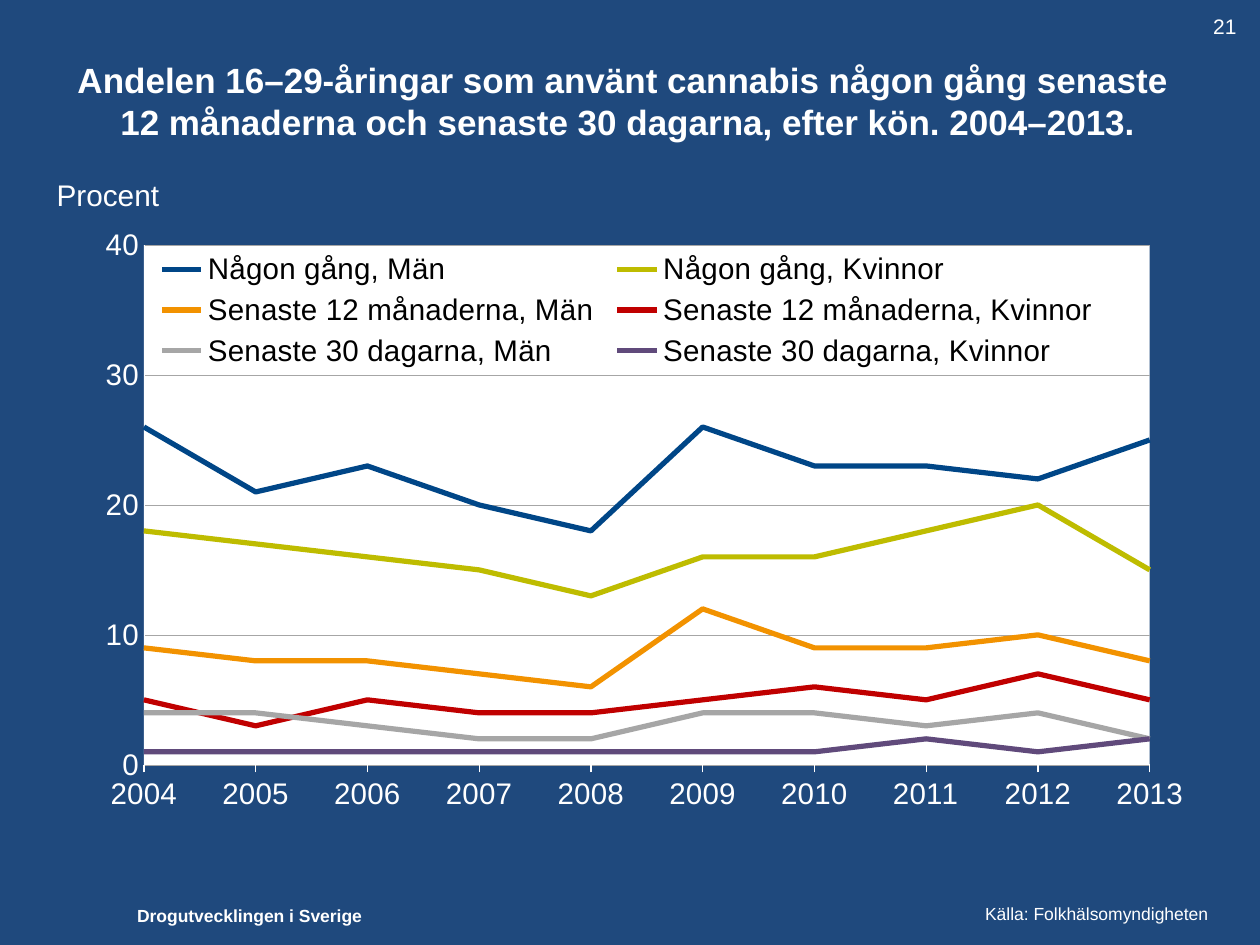
import pptx
import pptx.chart.data
import pptx.dml.color
import pptx.enum.chart
import pptx.enum.text
import pptx.oxml
import pptx.oxml.ns
import pptx.util

Inches, Pt = pptx.util.Inches, pptx.util.Pt
ALIGN, ANCHOR = pptx.enum.text.PP_ALIGN, pptx.enum.text.MSO_ANCHOR
TICK = pptx.enum.chart.XL_TICK_MARK

THEME = {
    "font": "Arial", "bg": "1F497D", "text": "FFFFFF", "plot": "FFFFFF",
    "legend": "000000", "grid": "A6A6A6",
    "title_size": 20, "chart_size": 17, "page_size": 12, "footer_size": 10,
}
TITLE = ("Andelen 16–29-åringar som använt cannabis någon gång senaste \v"
         "12 månaderna och senaste 30 dagarna, efter kön. 2004–2013.")
TITLE_BOX = (0.21, 0.21, 9.55, 1.18)
LABELS = [
    ("Drogutvecklingen i Sverige", (0.99, 7.13, 2.1, 0.27), {"size": "footer_size", "bold": True}),
    ("21", (9.53, 0.06, 0.45, 0.3), {"size": "page_size"}),
    ("Procent", (0.35, 1.35, 1.02, 0.39), {"size": "chart_size", "anchor": ANCHOR.MIDDLE}),
    ("Källa: Folkhälsomyndigheten", (7.72, 7.12, 2.19, 0.27), {"size": "footer_size"}),
]
YEARS = [str(year) for year in range(2004, 2014)]
SERIES = [
    ("Någon gång, Män", "004687", (26, 21, 23, 20, 18, 26, 23, 23, 22, 25)),
    ("Någon gång, Kvinnor", "BEBC00", (18, 17, 16, 15, 13, 16, 16, 18, 20, 15)),
    ("Senaste 12 månaderna, Män", "F29200", (9, 8, 8, 7, 6, 12, 9, 9, 10, 8)),
    ("Senaste 12 månaderna, Kvinnor", "C00000", (5, 3, 5, 4, 4, 5, 6, 5, 7, 5)),
    ("Senaste 30 dagarna, Män", "A6A6A6", (4, 4, 3, 2, 2, 4, 4, 3, 4, 2)),
    ("Senaste 30 dagarna, Kvinnor", "604A7B", (1, 1, 1, 1, 1, 1, 1, 2, 1, 2)),
]
CHART_BOX = (0.47, 1.78, 8.92, 4.86)
PLOT_LAYOUT = (0.076, 0.034, 0.903, 0.849)
LEGEND_LAYOUT = (0.08, 0.035, 0.86, 0.21)


def rgb(value):
    return pptx.dml.color.RGBColor.from_string(value)


def style_font(font, size, color="text", bold=False):
    font.name = THEME["font"]
    font.size = Pt(THEME[size])
    font.bold = bold
    font.color.rgb = rgb(THEME[color])


def style_line(line, color, width):
    line.color.rgb = rgb(color)
    line.width = Pt(width)


def write(sp, text, size, bold=False, align=ALIGN.LEFT, anchor=ANCHOR.TOP):
    tf = sp.text_frame
    tf.word_wrap = True
    tf.auto_size = pptx.enum.text.MSO_AUTO_SIZE.NONE
    tf.vertical_anchor = anchor
    p = tf.paragraphs[0]
    p.text = text
    p.alignment = align
    for r in p.runs:
        style_font(r.font, size, bold=bold)


def layout_xml(box, inner=False):
    target = '<c:layoutTarget val="inner"/>' if inner else ""
    modes = "".join(f'<c:{k}Mode val="edge"/>' for k in "xy")
    sizes = "".join(f'<c:{k} val="{v}"/>' for k, v in zip("xywh", box))
    return pptx.oxml.parse_xml(
        f'<c:layout {pptx.oxml.ns.nsdecls("c")}><c:manualLayout>'
        f"{target}{modes}{sizes}</c:manualLayout></c:layout>")


def set_layout(parent, layout, index):
    for old in parent.findall(pptx.oxml.ns.qn("c:layout")):
        parent.remove(old)
    parent.insert(index, layout)


def add_line_chart(s):
    data = pptx.chart.data.CategoryChartData(number_format="0")
    data.categories = YEARS
    for name, _, values in SERIES:
        data.add_series(name, values)
    chart = s.shapes.add_chart(pptx.enum.chart.XL_CHART_TYPE.LINE,
                               *map(Inches, CHART_BOX), data).chart
    chart.has_title = False
    style_font(chart.font, "chart_size")
    chart.plots[0].vary_by_categories = False
    for series, (_, color, _) in zip(chart.plots[0].series, SERIES):
        series.smooth = False
        series.marker.style = pptx.enum.chart.XL_MARKER_STYLE.NONE
        style_line(series.format.line, color, 3)

    cat, val = chart.category_axis, chart.value_axis
    for axis, tick, width in ((cat, TICK.OUTSIDE, 0.75), (val, TICK.NONE, 0.25)):
        axis.major_tick_mark = tick
        axis.minor_tick_mark = TICK.NONE
        style_font(axis.tick_labels.font, "chart_size")
        style_line(axis.format.line, THEME["text"], width)
    val.minimum_scale, val.maximum_scale, val.major_unit = 0, 40, 10
    val.tick_labels.number_format = "0"
    val.tick_labels.number_format_is_linked = False
    val.has_major_gridlines = True
    style_line(val.major_gridlines.format.line, THEME["grid"], 0.25)

    chart.has_legend = True
    legend = chart.legend
    legend.position = pptx.enum.chart.XL_LEGEND_POSITION.TOP
    legend.include_in_layout = False
    style_font(legend.font, "chart_size", "legend")
    set_layout(legend._element, layout_xml(LEGEND_LAYOUT), 1)

    plot_area = chart._chartSpace.chart.plotArea
    set_layout(plot_area, layout_xml(PLOT_LAYOUT, inner=True), 0)
    plot_area.append(pptx.oxml.parse_xml(
        f'<c:spPr {pptx.oxml.ns.nsdecls("c", "a")}><a:solidFill>'
        f'<a:srgbClr val="{THEME["plot"]}"/></a:solidFill></c:spPr>'))
    value_axis = plot_area.find(pptx.oxml.ns.qn("c:valAx"))
    between = value_axis.find(pptx.oxml.ns.qn("c:crossBetween"))
    if between is None:
        between = pptx.oxml.parse_xml(f'<c:crossBetween {pptx.oxml.ns.nsdecls("c")}/>')
        value_axis.find(pptx.oxml.ns.qn("c:crosses")).addnext(between)
    between.set("val", "midCat")


def main():
    prs = pptx.Presentation()
    prs.slide_width, prs.slide_height = Inches(10), Inches(7.5)
    s = prs.slides.add_slide(prs.slide_layouts[5])
    s.background.fill.solid()
    s.background.fill.fore_color.rgb = rgb(THEME["bg"])
    title = s.shapes.title
    title.left, title.top, title.width, title.height = map(Inches, TITLE_BOX)
    write(title, TITLE, "title_size", bold=True, align=ALIGN.CENTER, anchor=ANCHOR.MIDDLE)
    add_line_chart(s)
    for text, box, style in LABELS:
        write(s.shapes.add_textbox(*map(Inches, box)), text, **style)
    prs.save("out.pptx")


if __name__ == "__main__":
    main()
